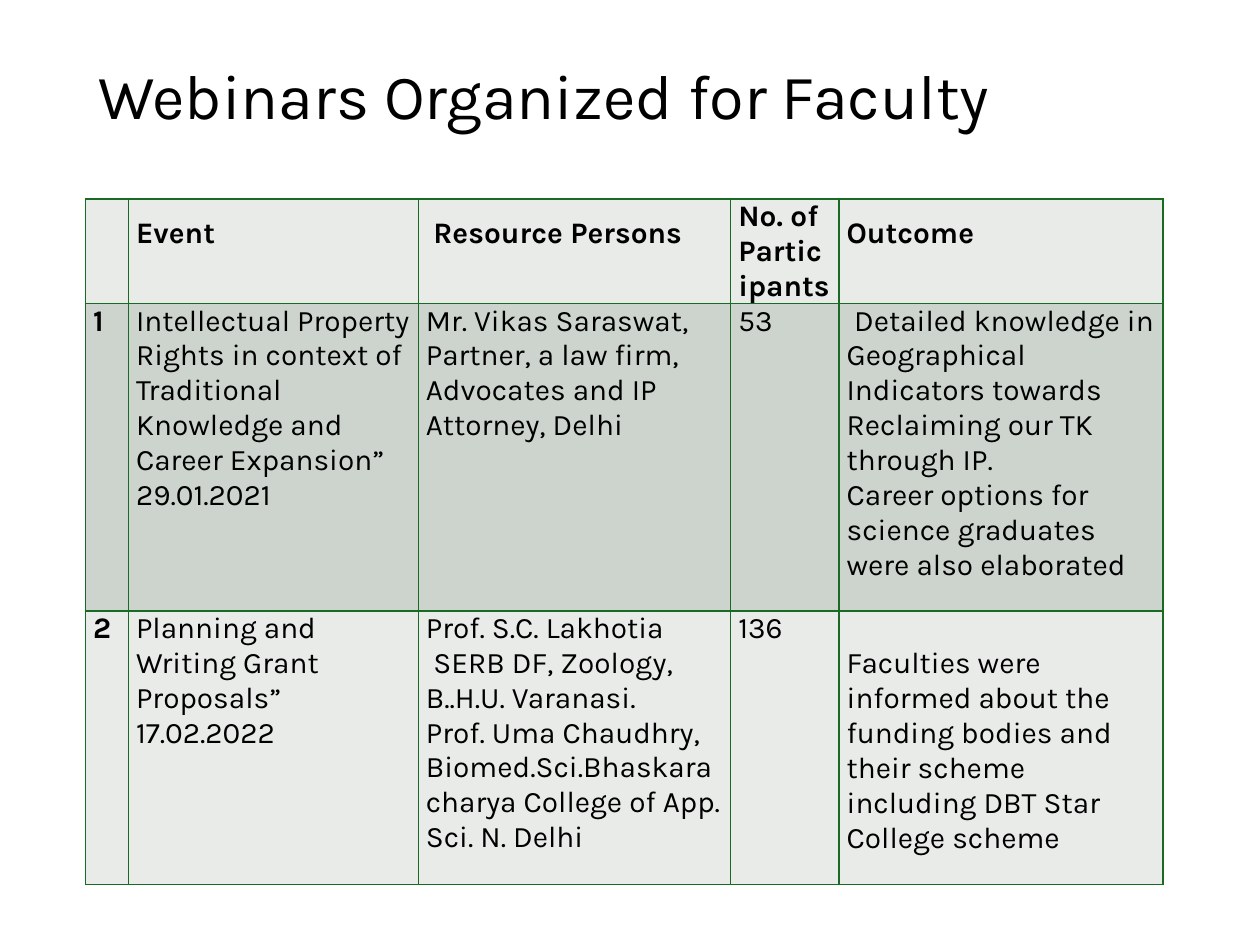
from dataclasses import dataclass

from lxml import etree
from pptx import Presentation
from pptx.dml.color import RGBColor
from pptx.enum.text import MSO_ANCHOR, PP_ALIGN
from pptx.oxml.ns import qn
from pptx.util import Inches, Pt

MIDDLE = MSO_ANCHOR.MIDDLE
LEFT = PP_ALIGN.LEFT


@dataclass
class Theme:
    font: str = "Karla"
    text: str = "000000"
    border: str = "196B24"
    light: str = "E8EBE8"
    dark: str = "CCD4CD"
    title_size: int = 36
    table_size: int = 17


THEME = Theme()

COLUMN_WIDTHS = [0.34, 2.3, 2.48, 0.86, 2.57]
ROW_HEIGHTS = [0.83, 2.44, 2.17]
ROW_FILLS = [THEME.light, THEME.dark, THEME.light]
SIDE_MARGIN = 0.06
FIRST_LINE_INDENT = 0.06
LINE_HEIGHT = 0.28

# One list of paragraphs per cell; a leading space marks a first-line indent.
ROWS = [
    [
        [],
        ["Event"],
        [" Resource Persons"],
        ["No. of Participants"],
        ["Outcome"],
    ],
    [
        ["1"],
        ["Intellectual Property Rights in context of Traditional Knowledge "
         "and Career Expansion” 29.01.2021"],
        ["Mr. Vikas Saraswat, Partner, a law firm, Advocates and IP "
         "Attorney, Delhi"],
        ["53"],
        [" Detailed knowledge in Geographical Indicators towards Reclaiming "
         "our TK through IP.",
         "Career options for science graduates were also elaborated"],
    ],
    [
        ["2"],
        ["Planning and Writing Grant Proposals” 17.02.2022"],
        ["Prof. S.C. Lakhotia",
         " SERB DF, Zoology, B..H.U. Varanasi.",
         "Prof. Uma Chaudhry, Biomed.Sci.Bhaskaracharya College of App. Sci. "
         "N. Delhi"],
        ["136"],
        ["Faculties were informed about the funding bodies and their scheme "
         "including DBT Star College scheme"],
    ],
]


def style_runs(para, size, bold=False):
    for span in para.runs:
        span.font.name = THEME.font
        span.font.size = Pt(size)
        span.font.bold = bold
        span.font.color.rgb = RGBColor.from_string(THEME.text)


def add_borders(cell):
    """Draw all four sides; call before the cell fill is set."""
    properties = cell._tc.get_or_add_tcPr()
    for side in ("a:lnL", "a:lnR", "a:lnT", "a:lnB"):
        line = etree.SubElement(properties, qn(side), w=str(Pt(1)))
        fill = etree.SubElement(line, qn("a:solidFill"))
        etree.SubElement(fill, qn("a:srgbClr"), val=THEME.border)


deck = Presentation()
deck.slide_width = Inches(10)
deck.slide_height = Inches(7.5)
page = deck.slides.add_slide(deck.slide_layouts[5])

title = page.shapes.title
title.left, title.top = Inches(0.68), Inches(0.38)
title.width, title.height = Inches(8.62), Inches(0.82)
title.text_frame.text = "Webinars Organized for Faculty"
title.text_frame.vertical_anchor = MIDDLE
title_para = title.text_frame.paragraphs[0]
title_para.alignment = LEFT
title_para.line_spacing = 0.9
style_runs(title_para, THEME.title_size)

table = page.shapes.add_table(
    len(ROW_HEIGHTS), len(COLUMN_WIDTHS), Inches(0.68), Inches(1.58),
    Inches(sum(COLUMN_WIDTHS)), Inches(sum(ROW_HEIGHTS))).table
table.first_row = False
table.horz_banding = False
for column, width in zip(table.columns, COLUMN_WIDTHS):
    column.width = Inches(width)
for row, height in zip(table.rows, ROW_HEIGHTS):
    row.height = Inches(height)

for row_index, cells in enumerate(ROWS):
    for column_index, texts in enumerate(cells):
        cell = table.cell(row_index, column_index)
        cell.margin_left = cell.margin_right = Inches(SIDE_MARGIN)
        cell.margin_top = cell.margin_bottom = 0
        add_borders(cell)
        cell.fill.solid()
        cell.fill.fore_color.rgb = RGBColor.from_string(ROW_FILLS[row_index])

        cell.text_frame.text = "\n".join(text.strip() for text in texts)
        for text, para in zip(texts, cell.text_frame.paragraphs):
            if text.startswith(" "):
                indent = str(Inches(FIRST_LINE_INDENT))
                para._p.get_or_add_pPr().set("indent", indent)
            style_runs(para, THEME.table_size,
                       bold=row_index == 0 or column_index == 0)

# Single-line headings sit lower than the wrapped participants heading.
for column_index in (1, 2, 4):
    table.cell(0, column_index).text_frame.paragraphs[0].line_spacing = 1.5

# The last outcome starts one line down.
table.cell(2, 4).margin_top = Inches(LINE_HEIGHT)

deck.save("out.pptx")
